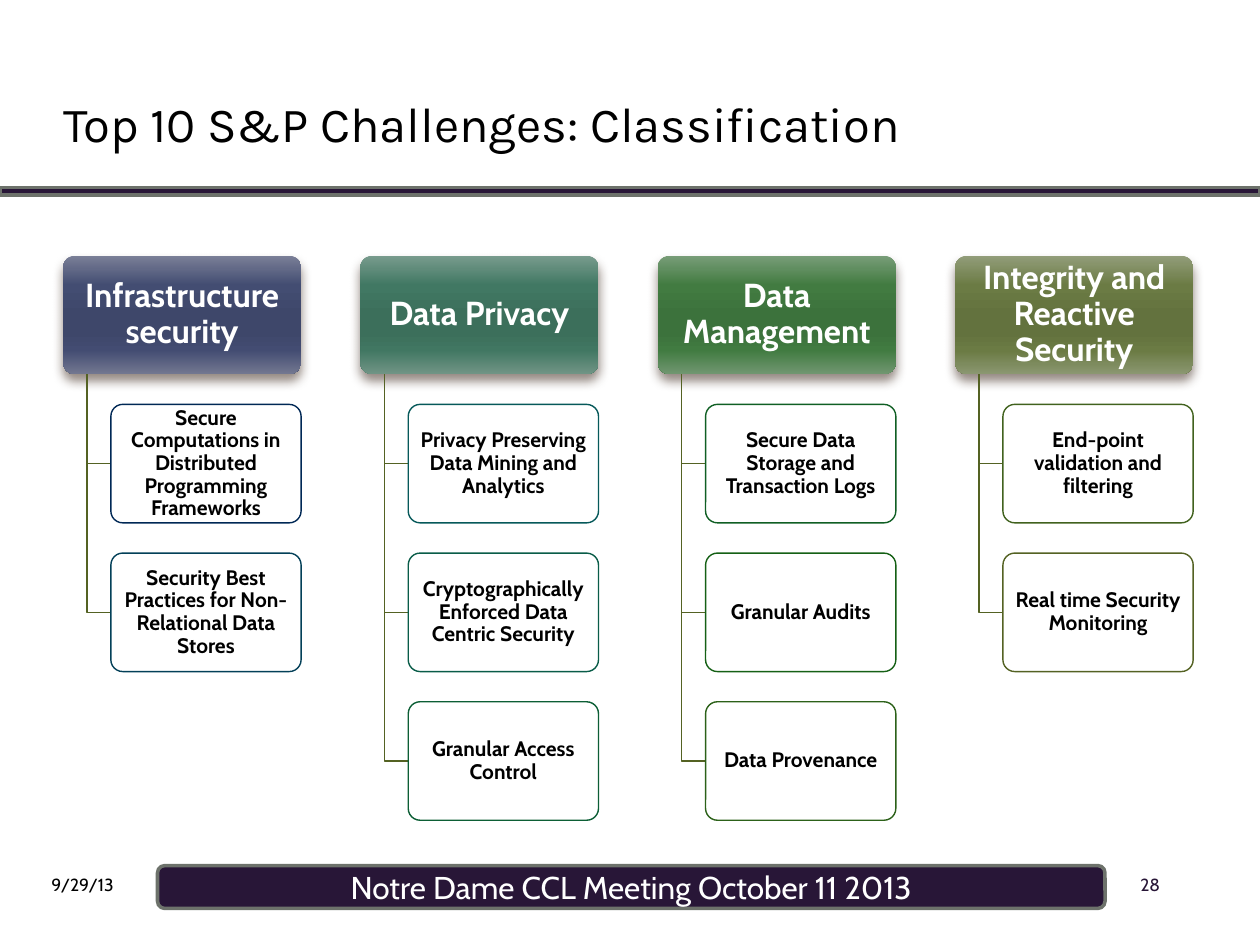
from lxml import etree
from pptx import Presentation
from pptx.dml.color import RGBColor
from pptx.enum.shapes import MSO_SHAPE
from pptx.enum.text import MSO_ANCHOR, PP_ALIGN
from pptx.oxml.ns import qn
from pptx.util import Inches, Pt

RECT, ROUND = MSO_SHAPE.RECTANGLE, MSO_SHAPE.ROUNDED_RECTANGLE
TOP, MIDDLE = MSO_ANCHOR.TOP, MSO_ANCHOR.MIDDLE
LEFT, CENTER = PP_ALIGN.LEFT, PP_ALIGN.CENTER

DARK, GREY, OLIVE = "281637", "6D726B", "546223"
WHITE, BLACK, SHADOW = "FFFFFF", "000000", "4E3B30"

COL_X, COL_STEP = 0.5, 2.36
ROW_Y, ROW_STEP = 2.03, 1.18
HEAD_W, BOX_W, BOX_H = 1.89, 1.51, 0.94
INDENT = 0.19
STOPS = (0, 25, 50, 65, 80, 100)

# heading, its gradient colours, and (text, outline colour) for each challenge
COLUMNS = [
    ("Infrastructure security",
     ("7A7F97", "434D72", "3E476A", "3E476A", "434C72", "727790"),
     [("Secure Computations in Distributed Programming Frameworks", "002855"),
      ("Security Best Practices for Non-Relational Data Stores", "034058")]),
    ("Data Privacy",
     ("789B8D", "417863", "3C6F5B", "3C6F5B", "417762", "709485"),
     [("Privacy Preserving Data Mining and Analytics", "06595A"),
      ("Cryptographically Enforced Data Centric Security", "095C48"),
      ("Granular Access Control", "0C5E35")]),
    ("Data Management",
     ("789D78", "427B41", "3C723C", "3C723C", "417B41", "709670"),
     [("Secure Data Storage and Transaction Logs", "105F24"),
      ("Granular Audits", "156015"),
      ("Data Provenance", "2C6119")]),
    ("Integrity and Reactive Security",
     ("929D7A", "6B7B44", "63723E", "63723E", "6B7B44", "8B9771"),
     [("End-point validation and filtering", "41621E"),
      ("Real time Security Monitoring", "546223")]),
]


def rgb(value):
    return RGBColor.from_string(value)


def add_color(parent, value, alpha=None):
    """Append a colour element, with opacity in percent if given."""
    clr = etree.SubElement(parent, qn("a:srgbClr"), val=value)
    if alpha is not None:
        etree.SubElement(clr, qn("a:alpha"), val=str(alpha * 1000))


def set_text(sp, text, size, color, font="Cabin", bold=False, align=LEFT,
             anchor=TOP, insets=(0, 0), spacing=None, wrap=True):
    tf = sp.text_frame
    tf.word_wrap = wrap
    tf.vertical_anchor = anchor
    tf.margin_left = tf.margin_right = Inches(insets[0])
    tf.margin_top = tf.margin_bottom = Inches(insets[1])
    p = tf.paragraphs[0]
    p.text = text
    p.alignment = align
    if spacing:
        p.line_spacing = spacing
    f = p.runs[0].font
    f.name, f.size, f.bold = font, Pt(size), bold
    f.color.rgb = rgb(color)


def add_label(s, x, y, w, h, text, size, color, **style):
    sp = s.shapes.add_textbox(Inches(x), Inches(y), Inches(w), Inches(h))
    set_text(sp, text, size, color, **style)


def add_box(s, kind, x, y, w, h, fill=None, line=None, width=0.79):
    sp = s.shapes.add_shape(kind, Inches(x), Inches(y), Inches(w), Inches(h))
    sp.shadow.inherit = False
    if fill:
        sp.fill.solid()
        sp.fill.fore_color.rgb = rgb(fill)
    if line:
        sp.line.color.rgb = rgb(line)
        sp.line.width = Pt(width)
    else:
        sp.line.fill.background()
    return sp


def add_heading(s, x, text, colors):
    sp = add_box(s, ROUND, x, ROW_Y, HEAD_W, BOX_H)
    sp.adjustments[0] = 0.1
    sp.fill.gradient()
    sp.fill.gradient_angle = 270
    stops = sp._element.spPr.find(".//" + qn("a:gsLst"))
    for gs in list(stops):
        stops.remove(gs)
    for pos, color in zip(STOPS, colors):
        add_color(etree.SubElement(stops, qn("a:gs"), pos=str(pos * 1000)), color)
    effects = sp._element.spPr.find(qn("a:effectLst"))
    shadow = etree.SubElement(effects, qn("a:outerShdw"), blurRad=str(Pt(6)),
                              dist=str(Pt(4)), dir="5400000", rotWithShape="0")
    add_color(shadow, SHADOW, 60)
    set_text(sp, text, 19, WHITE, bold=True, align=CENTER, anchor=MIDDLE,
             insets=(0.04, 0.03), spacing=0.9)


def add_challenge(s, x, y, text, color):
    sp = add_box(s, ROUND, x, y, BOX_W, BOX_H, WHITE, color)
    sp.adjustments[0] = 0.1
    clr = sp._element.spPr.find(qn("a:solidFill")).find(qn("a:srgbClr"))
    etree.SubElement(clr, qn("a:alpha"), val="90000")
    set_text(sp, text, 12, BLACK, bold=True, align=CENTER, anchor=MIDDLE,
             insets=(0.03, 0.02), spacing=0.9)


def add_branch(s, x, top, bottom):
    """Draw the elbow from a heading down and right to a challenge."""
    fb = s.shapes.build_freeform(Inches(x), Inches(top))
    fb.add_line_segments([(Inches(x), Inches(bottom)),
                          (Inches(x + INDENT), Inches(bottom))], close=False)
    sp = fb.convert_to_shape()
    sp.shadow.inherit = False
    sp.fill.background()
    sp.line.color.rgb = rgb(OLIVE)
    sp.line.width = Pt(0.79)


def add_column(s, x, heading, colors, challenges):
    add_heading(s, x, heading, colors)
    for row, (text, color) in enumerate(challenges, start=1):
        y = ROW_Y + row * ROW_STEP
        add_branch(s, x + INDENT, ROW_Y + BOX_H, y + BOX_H / 2)
        add_challenge(s, x + 2 * INDENT, y, text, color)


def main():
    prs = Presentation()
    prs.slide_width, prs.slide_height = Inches(10), Inches(7.5)
    s = prs.slides.add_slide(prs.slide_layouts[6])

    footer = add_box(s, ROUND, 1.25, 6.87, 7.52, 0.34, DARK, GREY, 2)
    set_text(footer, "Notre Dame CCL Meeting October 11 2013", 18, WHITE,
             align=CENTER, anchor=MIDDLE, insets=(0.1, 0.05))
    add_box(s, RECT, 0, 1.49, 10, 0.06, DARK, GREY, 2)
    add_label(s, 0.31, 6.89, 0.74, 0.27, "9/29/13", 10, BLACK,
              insets=(0.1, 0.05), wrap=False)
    add_label(s, 0.5, 0.53, 8.98, 0.89, "Top 10 S&P Challenges: Classification",
              28, BLACK, font="Karla", anchor=MIDDLE)
    add_label(s, 9.05, 6.94, 0.4, 0.17, "28", 10, DARK)

    for i, column in enumerate(COLUMNS):
        add_column(s, COL_X + i * COL_STEP, *column)
    prs.save("out.pptx")


if __name__ == "__main__":
    main()
